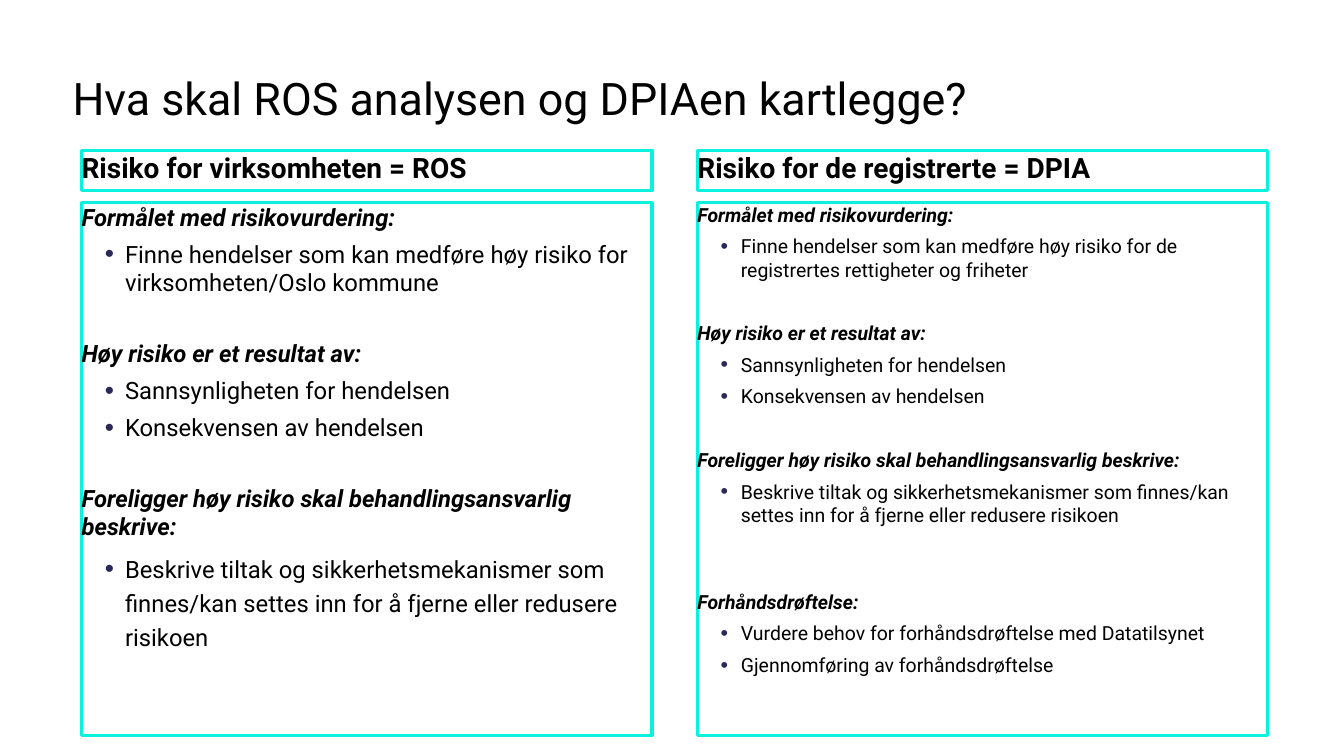
"""Builds the slide comparing what the ROS analysis and the DPIA should map."""
from lxml.etree import SubElement
from pptx import Presentation
from pptx.dml.color import RGBColor
from pptx.enum.shapes import MSO_SHAPE
from pptx.enum.text import MSO_ANCHOR, PP_ALIGN
from pptx.oxml.ns import qn
from pptx.util import Pt

THEME = {
    "font": "Roboto",
    "text": RGBColor(0, 0, 0),
    "border": RGBColor(0x0A, 0xF1, 0xDE),
    "bullet": "2A2859",
    "title": Pt(32),
    "heading": Pt(20),
    "ros": Pt(17),
    "dpia": Pt(13.9),
}
FRAME = {
    "margin_left": 0, "margin_top": 0, "margin_right": 0, "margin_bottom": 0,
    "word_wrap": True, "vertical_anchor": MSO_ANCHOR.TOP,
}


def write(paragraph, text, size, before=0, **emphasis):
    """Fill a left-aligned paragraph with one formatted run."""
    paragraph.alignment = PP_ALIGN.LEFT
    paragraph.space_before = Pt(before)
    run = paragraph.add_run()
    run.text = text
    run.font.color.rgb = THEME["text"]
    for name, value in {"name": THEME["font"], "size": size, **emphasis}.items():
        setattr(run.font, name, value)


def add_panel(left, top, width, height):
    """Add an outlined box and return its text frame."""
    panel = slide.shapes.add_shape(MSO_SHAPE.RECTANGLE, left, top, width, height)
    panel.shadow.inherit = False
    panel.fill.background()
    panel.line.color.rgb = THEME["border"]
    panel.line.width = Pt(2.25)
    for name, value in FRAME.items():
        setattr(panel.text_frame, name, value)
    return panel.text_frame


purpose = "Formålet med risikovurdering:"
result = "Høy risiko er et resultat av:"
result_points = ["Sannsynligheten for hendelsen", "Konsekvensen av hendelsen"]
describe = "Foreligger høy risiko skal behandlingsansvarlig beskrive:"
measures = ("Beskrive tiltak og sikkerhetsmekanismer som finnes/kan settes inn "
            "for å fjerne eller redusere risikoen")

columns = [
    (58.3, "Risiko for virksomheten = ROS", THEME["ros"], [
        (0, purpose, 1, ["Finne hendelser som kan medføre høy risiko for "
                         "virksomheten/Oslo kommune"]),
        (30, result, 1, result_points),
        (30, describe, 1.2, [measures]),
    ]),
    (498.2, "Risiko for de registrerte = DPIA", THEME["dpia"], [
        (0, purpose, 1, ["Finne hendelser som kan medføre høy risiko for de "
                         "registrertes rettigheter og friheter"]),
        (28.6, result, 1, result_points),
        (28.6, describe, 1, [measures]),
        (45.2, "Forhåndsdrøftelse:", 1, [
            "Vurdere behov for forhåndsdrøftelse med Datatilsynet",
            "Gjennomføring av forhåndsdrøftelse",
        ]),
    ]),
]

presentation = Presentation()
presentation.slide_width = Pt(960)
presentation.slide_height = Pt(540)
slide = presentation.slides.add_slide(presentation.slide_layouts[5])

title = slide.shapes.title
title.left, title.top, title.width, title.height = Pt(51.8), Pt(50.4), Pt(847.4), Pt(68.4)
for name, value in FRAME.items():
    setattr(title.text_frame, name, value)
write(title.text_frame.paragraphs[0], "Hva skal ROS analysen og DPIAen kartlegge?",
      THEME["title"])

for left, heading, size, sections in columns:
    heading_frame = add_panel(Pt(left), Pt(107.3), Pt(407.5), Pt(28.8))
    write(heading_frame.paragraphs[0], heading, THEME["heading"], bold=True)

    body = add_panel(Pt(left), Pt(144.7), Pt(407.5), Pt(380.9))
    for index, (gap, question, spacing, points) in enumerate(sections):
        paragraph = body.add_paragraph() if index else body.paragraphs[0]
        write(paragraph, question, size, gap, bold=True, italic=True)
        for point in points:
            paragraph = body.add_paragraph()
            paragraph.level = 1
            properties = paragraph._p.get_or_add_pPr()
            properties.set("marL", str(Pt(31)))
            properties.set("indent", str(Pt(-14.4)))
            bullet_color = SubElement(properties, qn("a:buClr"))
            SubElement(bullet_color, qn("a:srgbClr"), val=THEME["bullet"])
            SubElement(properties, qn("a:buSzPct"), val="110000")
            SubElement(properties, qn("a:buFont"), typeface="Arial")
            SubElement(properties, qn("a:buChar"), char="•")
            paragraph.line_spacing = float(spacing)
            write(paragraph, point, size, 6)

presentation.save("out.pptx")
